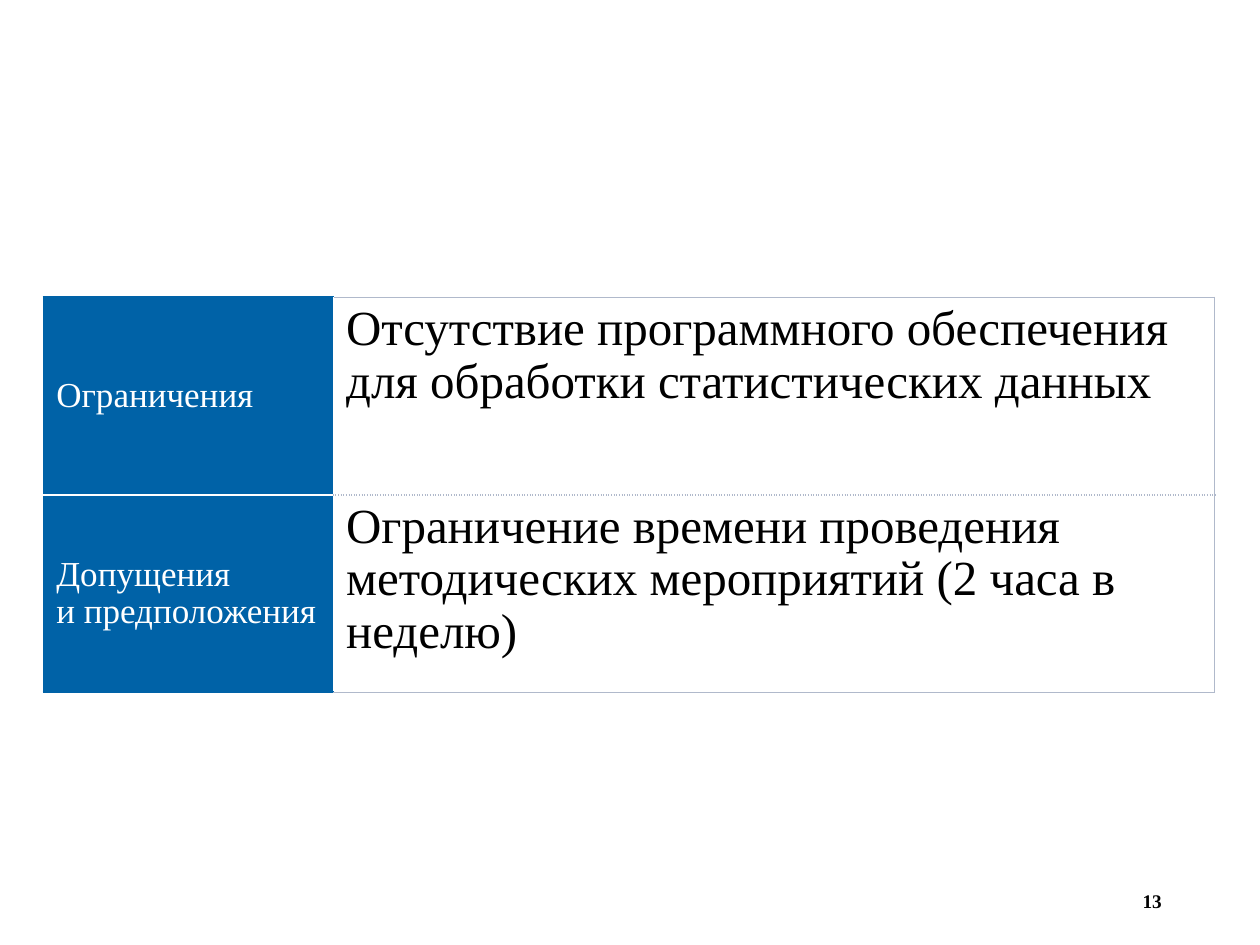
from dataclasses import dataclass

from lxml import etree
from pptx import Presentation
from pptx.dml.color import RGBColor
from pptx.enum import text
from pptx.oxml import ns
from pptx.util import Pt


@dataclass(frozen=True)
class Theme:
    font: str = "Times New Roman"
    blue: str = "0062A7"
    grey: str = "B0B9CB"
    white: str = "FFFFFF"
    black: str = "000000"
    label_size: int = 20
    body_size: int = 28
    number_size: int = 11


THEME = Theme()
COLUMN_WIDTHS = (165.6, 503.3)
ROW_HEIGHT = 112.8
ROWS = (
    ("Ограничения",
     "Отсутствие программного обеспечения для обработки статистических данных"),
    ("Допущения\nи предположения",
     "Ограничение времени проведения методических мероприятий (2 часа в неделю)"),
)


def format_text(text_frame, size, color, bold=False, line_spacing=1.0):
    for paragraph in text_frame.paragraphs:
        paragraph.line_spacing = line_spacing
        for run in paragraph.runs:
            run.font.name = THEME.font
            run.font.size = Pt(size)
            run.font.bold = bold
            run.font.color.rgb = RGBColor.from_string(color)


def set_borders(cell, **borders):
    """Draw each side (L, R, T, B) given as (color, width, dash)."""
    properties = cell._tc.get_or_add_tcPr()
    sides = [side for side in "LRTB" if side in borders]
    for position, side in enumerate(sides):
        color, width, dash = borders[side]
        line = etree.Element(ns.qn(f"a:ln{side}"), w=str(Pt(width)))
        fill = etree.SubElement(line, ns.qn("a:solidFill"))
        etree.SubElement(fill, ns.qn("a:srgbClr"), val=color)
        etree.SubElement(line, ns.qn("a:prstDash"), val=dash)
        properties.insert(position, line)


def fill_cell(cell, content, fill):
    cell.text_frame.text = content
    cell.fill.solid()
    cell.fill.fore_color.rgb = RGBColor.from_string(fill)


def add_label(cell, content, top, bottom):
    fill_cell(cell, content, THEME.blue)
    cell.vertical_anchor = text.MSO_ANCHOR.MIDDLE
    format_text(cell.text_frame, THEME.label_size, THEME.white, line_spacing=0.95)
    set_borders(cell, L=(THEME.blue, 1.5, "solid"), T=top, B=bottom)


def add_description(cell, content, top, bottom):
    fill_cell(cell, content, THEME.white)
    format_text(cell.text_frame, THEME.body_size, THEME.black, line_spacing=0.97)
    set_borders(cell, R=(THEME.grey, 1, "solid"), T=top, B=bottom)


def add_constraints_table(slide):
    frame = slide.shapes.add_table(
        len(ROWS), len(COLUMN_WIDTHS), Pt(25), Pt(170),
        Pt(sum(COLUMN_WIDTHS)), Pt(ROW_HEIGHT * len(ROWS)))
    table = frame.table
    table.first_row = table.horz_banding = False
    for column, width in zip(table.columns, COLUMN_WIDTHS):
        column.width = Pt(width)

    label_edge = (THEME.blue, 1.5, "solid")
    label_divider = (THEME.white, 1.5, "solid")
    body_edge = (THEME.grey, 1, "solid")
    body_divider = (THEME.grey, 1.5, "sysDot")
    last = len(ROWS) - 1
    for index, (label, description) in enumerate(ROWS):
        table.rows[index].height = Pt(ROW_HEIGHT)
        add_label(table.cell(index, 0), label,
                  label_divider if index else label_edge,
                  label_divider if index < last else label_edge)
        add_description(table.cell(index, 1), description,
                        body_divider if index else body_edge,
                        body_divider if index < last else body_edge)


def add_page_number(slide, number):
    box = slide.shapes.add_textbox(Pt(509), Pt(500.4), Pt(162), Pt(28.8))
    frame = box.text_frame
    frame.word_wrap = True
    frame.vertical_anchor = text.MSO_ANCHOR.MIDDLE
    frame.text = str(number)
    frame.paragraphs[0].alignment = text.PP_ALIGN.RIGHT
    format_text(frame, THEME.number_size, THEME.black, bold=True)


def main():
    presentation = Presentation()
    presentation.slide_width = Pt(720)
    presentation.slide_height = Pt(540)
    blank_layout = presentation.slide_layouts[6]
    slide = presentation.slides.add_slide(blank_layout)
    add_page_number(slide, 13)
    add_constraints_table(slide)
    presentation.save("out.pptx")


if __name__ == "__main__":
    main()
